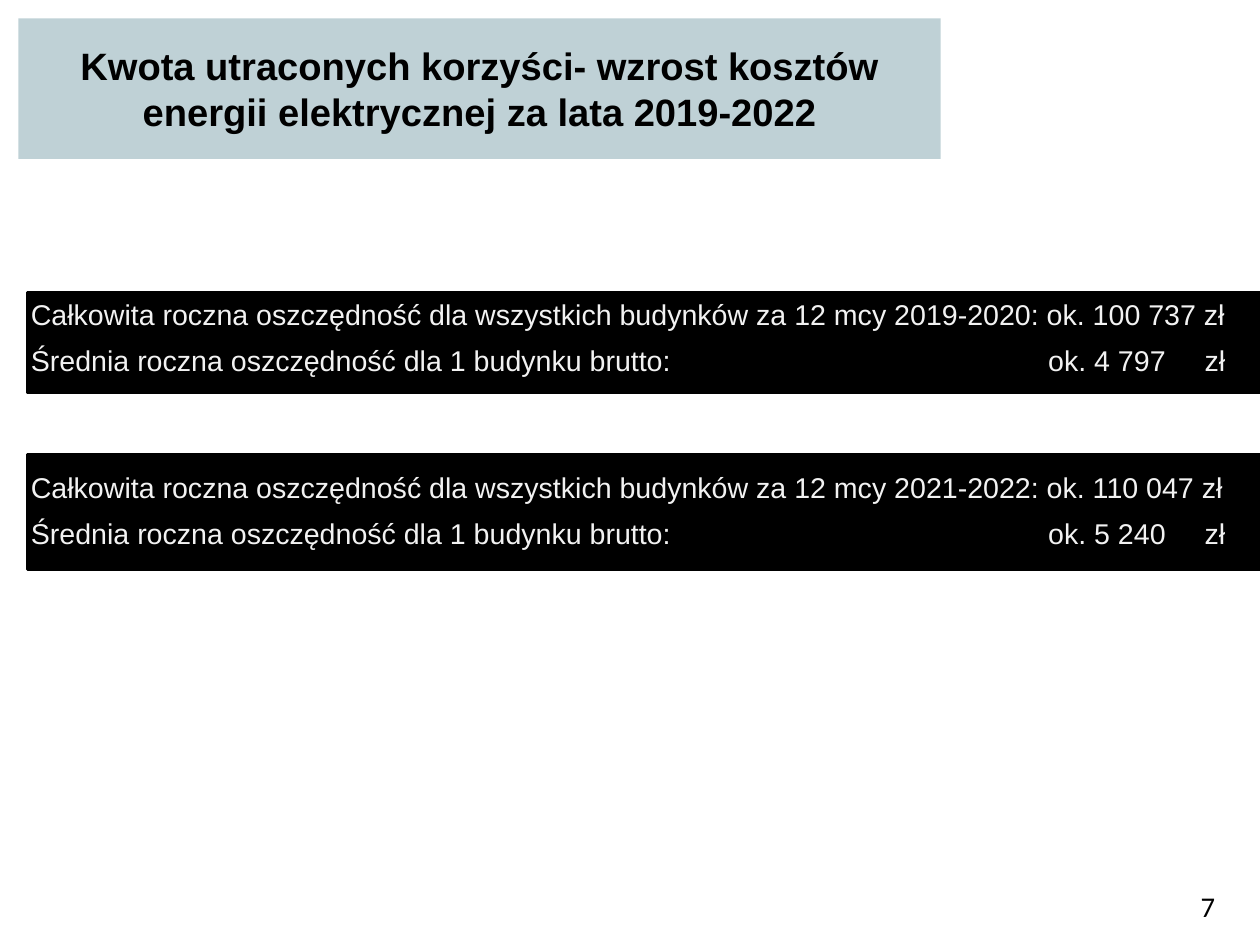
from dataclasses import dataclass

from lxml.etree import SubElement
from pptx import Presentation
from pptx.dml.color import RGBColor
from pptx.enum.shapes import MSO_SHAPE
from pptx.enum.text import MSO_ANCHOR, MSO_AUTO_SIZE, PP_ALIGN
from pptx.oxml.ns import qn
from pptx.shapes.autoshape import Shape
from pptx.slide import Slide
from pptx.text.text import TextFrame
from pptx.util import Inches, Pt

TITLE = "Kwota utraconych korzyści- wzrost kosztów energii elektrycznej za lata 2019-2022"
CM_PER_INCH = 2.54
TAB_STOPS = (8.9, 10.27)


@dataclass
class Saving:
    years: str
    total: str
    average: str
    top: float
    height: float
    gap_before: float


SAVINGS = [
    Saving("2019-2020", "100 737", "4 797", 2.56, 0.87, 0),
    Saving("2021-2022", "110 047", "5 240", 3.98, 1, 50.5),
]


def rgb(color: str) -> RGBColor:
    return RGBColor.from_string(color)


def place(s: Shape, left: float, top: float, width: float, height: float) -> None:
    s.left, s.top, s.width, s.height = map(Inches, (left, top, width, height))


def fill(s: Shape, color: str) -> None:
    s.fill.solid()
    s.fill.fore_color.rgb = rgb(color)


def frame(tf: TextFrame, anchor: MSO_ANCHOR, side: float = 0, top: float = 0) -> None:
    settings = {
        "word_wrap": True,
        "auto_size": MSO_AUTO_SIZE.NONE,
        "vertical_anchor": anchor,
        "margin_left": Inches(side),
        "margin_right": Inches(side),
        "margin_top": Inches(top),
        "margin_bottom": 0,
    }
    for name, value in settings.items():
        setattr(tf, name, value)


def write(tf: TextFrame, lines: list[str], align: PP_ALIGN, color: str, **font: object) -> None:
    for i, line in enumerate(lines):
        p = tf.paragraphs[0] if i == 0 else tf.add_paragraph()
        p.alignment = align
        r = p.add_run()
        r.text = line
        r.font.color.rgb = rgb(color)
        for name, value in font.items():
            setattr(r.font, name, value)


def add_bar(slide: Slide, saving: Saving) -> None:
    s = slide.shapes.add_shape(MSO_SHAPE.RECTANGLE, 0, 0, 0, 0)
    place(s, 0.24, saving.top, 10.79, saving.height)
    s.shadow.inherit = False
    fill(s, "000000")
    s.line.color.rgb = rgb("000000")
    s.line.width = Pt(2)


def add_savings_text(slide: Slide) -> None:
    s = slide.shapes.add_textbox(0, 0, 0, 0)
    place(s, 0.27, 1.79, 10.49, 5.9)
    tf = s.text_frame
    frame(tf, MSO_ANCHOR.TOP, top=0.81)
    lines = []
    for saving in SAVINGS:
        lines += [
            f"Całkowita roczna oszczędność dla wszystkich budynków za 12 mcy {saving.years}: ok. {saving.total} zł",
            f"Średnia roczna oszczędność dla 1 budynku brutto:\tok. {saving.average}\tzł",
        ]
    write(tf, lines, PP_ALIGN.LEFT, "F2F2F2", name="Arial", size=Pt(18))
    for saving, total, average in zip(SAVINGS, tf.paragraphs[::2], tf.paragraphs[1::2]):
        total.space_before = Pt(saving.gap_before)
        for p in (total, average):
            p.space_after = Pt(7.5)
        tabs = SubElement(average._p.get_or_add_pPr(), qn("a:tabLst"))
        for stop in TAB_STOPS:
            SubElement(tabs, qn("a:tab"), pos=str(Inches(stop)), algn="l")


def main() -> None:
    """Build the slide on lost savings in electricity costs."""
    prs = Presentation()
    prs.slide_width, prs.slide_height = Inches(28 / CM_PER_INCH), Inches(21 / CM_PER_INCH)
    slide = prs.slides.add_slide(prs.slide_layouts[5])

    for saving in SAVINGS:
        add_bar(slide, saving)
    add_savings_text(slide)

    title = slide.shapes.title
    place(title, 0.16, 0.16, 8.07, 1.23)
    fill(title, "BFD1D6")
    frame(title.text_frame, MSO_ANCHOR.MIDDLE, 0.19)
    write(title.text_frame, [TITLE], PP_ALIGN.CENTER, "000000", name="Arial", size=Pt(24), bold=True)

    number = slide.shapes.add_textbox(0, 0, 0, 0)
    place(number, 8.39, 7.78, 2.24, 0.3)
    frame(number.text_frame, MSO_ANCHOR.BOTTOM)
    write(number.text_frame, ["7"], PP_ALIGN.RIGHT, "000000", name="Calibri", size=Pt(18))

    prs.save("out.pptx")


if __name__ == "__main__":
    main()
